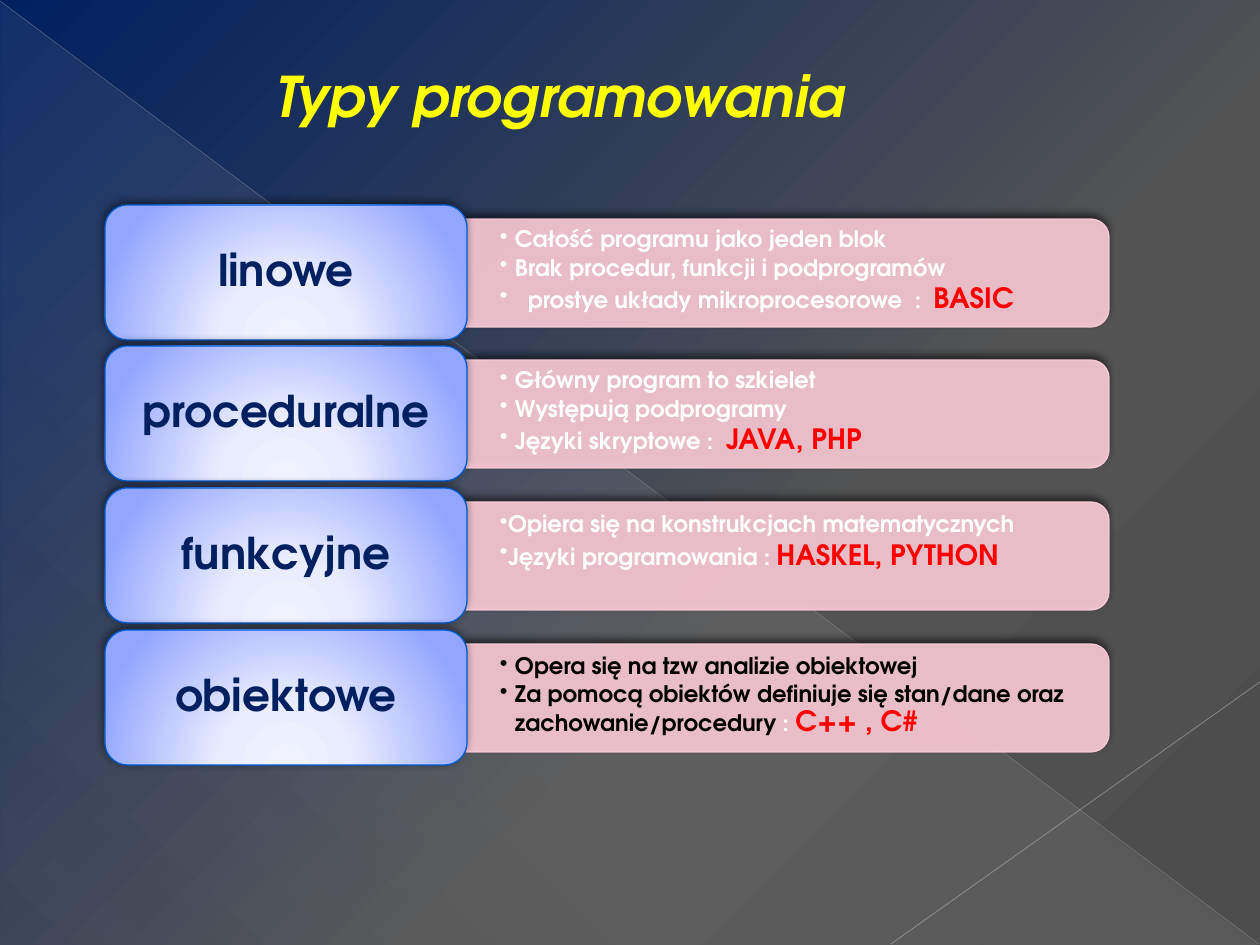
"""Build a slide that lists four types of programming with their traits."""
import pptx
import pptx.dml.color
import pptx.enum.shapes
import pptx.enum.text
import pptx.oxml
import pptx.oxml.ns
import pptx.util
from lxml import etree

PX = 7257
FONT = "TeX Gyre Adventor"
WHITE, BLACK, RED, NAVY = "FFFFFF", "000000", "FF0000", "002060"
qn = pptx.oxml.ns.qn
Pt = pptx.util.Pt
SHAPES = pptx.enum.shapes.MSO_SHAPE
MIDDLE = pptx.enum.text.MSO_ANCHOR.MIDDLE


def paint(stops, direction=None):
    """Return a solid fill for one (position, colour, opacity) stop, else a gradient."""
    colors = [
        f'<a:srgbClr val="{color}"><a:alpha val="{opacity * 1000}"/></a:srgbClr>'
        for _, color, opacity in stops
    ]
    namespace = pptx.oxml.ns.nsdecls("a")
    if direction is None:
        return pptx.oxml.parse_xml(f"<a:solidFill {namespace}>{colors[0]}</a:solidFill>")
    listing = "".join(
        f'<a:gs pos="{stop[0] * 1000}">{color}</a:gs>' for stop, color in zip(stops, colors)
    )
    return pptx.oxml.parse_xml(
        f"<a:gradFill {namespace}><a:gsLst>{listing}</a:gsLst>{direction}</a:gradFill>"
    )


def add_run(paragraph, text, size, color):
    """Add a bold run and return its font."""
    run = paragraph.add_run()
    run.text = text
    run.font.color.rgb = pptx.dml.color.RGBColor.from_string(color)
    run.font.name = FONT
    run.font.size = Pt(size)
    run.font.bold = True
    return run.font


presentation = pptx.Presentation()
presentation.slide_width = 1260 * PX
presentation.slide_height = 945 * PX
slide = presentation.slides.add_slide(presentation.slide_layouts[6])

slide.background.fill.solid()
plain_fill = slide.element.find(".//" + qn("p:bgPr")).find(qn("a:solidFill"))
plain_fill.getparent().replace(plain_fill, paint(
    [(0, NAVY, 100), (62, "535353", 100), (100, "4D4D4D", 100)],
    '<a:lin ang="2700000" scaled="0"/>',
))

triangle = slide.shapes.add_shape(SHAPES.RIGHT_TRIANGLE, 1 * PX, 2 * PX, 1258 * PX, 943 * PX)
triangle.element.spPr.append(paint(
    [(0, "D2D2D2", 10), (70, "D2D2D2", 8), (100, "D2D2D2", 1)],
    '<a:lin ang="7980000" scaled="0"/>',
))
triangle.line.fill.background()
triangle.shadow.inherit = False

for ends, color, width, opacity in [
    ((0, 1, 1259, 944), "BFBFBF", 0.39, 35),
    ((1260, 682, 891, 944), "C6C6C6", 0.47, 45),
]:
    connector = slide.shapes.add_connector(
        pptx.enum.shapes.MSO_CONNECTOR.STRAIGHT, *[end * PX for end in ends]
    )
    connector.line.width = Pt(width)
    properties = connector.element.spPr
    properties.find(qn("a:ln")).append(paint([(0, color, opacity)]))
    etree.SubElement(properties, qn("a:effectLst"))

types = [
    ("linowe", WHITE, 0, [
        (15, 15, [("Całość programu jako jeden blok", 13, WHITE)]),
        (15, 15, [("Brak procedur, funkcji i podprogramów", 13, WHITE)]),
        (28, 28, [("prostye układy mikroprocesorowe  :  ", 13, WHITE), ("BASIC", 16, RED)]),
    ]),
    ("proceduralne", WHITE, 0, [
        (15, 15, [("Główny program to szkielet", 13, WHITE)]),
        (15, 15, [("Występują podprogramy", 13, WHITE)]),
        (15, 15, [("Języki skryptowe :  ", 13, WHITE), ("JAVA, PHP", 16, RED)]),
    ]),
    ("funkcyjne", WHITE, 28, [
        (0, 0, [("Opiera się na konstrukcjach matematycznych", 13, WHITE)]),
        (0, 0, [("Języki programowania : ", 13, WHITE), ("HASKEL, PYTHON", 16, RED)]),
    ]),
    ("obiektowe", BLACK, 0, [
        (15, 15, [("Opera się na tzw analizie obiektowej", 13, BLACK)]),
        (15, 15, [
            ("Za pomocą obiektów definiuje się stan/dane oraz zachowanie/procedury ", 13, BLACK),
            (": ", 13, WHITE),
            ("C++ , C#", 16, RED),
        ]),
    ]),
]
bar_fill = [(0, "FFCEDA", 90)]
tile_fill = [(0, "F0F2FF", 100), (34, "EAEDFF", 100), (100, "92A5FF", 100)]
tile_glow = (
    '<a:path path="circle"><a:fillToRect l="50000" t="155000" r="50000" b="-55000"/></a:path>'
)

for row, (name, bullet_color, bottom_margin, details) in enumerate(types):
    top = 205 + 425 * row // 3
    for preset, box, rotation, stops, direction, edge, shadow in [
        (SHAPES.ROUND_2_SAME_RECTANGLE, (733, top - 254, 108, 644), 90,
         bar_fill, None, bar_fill, (60, 4, 3)),
        (SHAPES.ROUNDED_RECTANGLE, (105, top, 362, 135), 0,
         tile_fill, tile_glow, [(0, "005BD3", 100)], (50, 5, 2)),
    ]:
        shape = slide.shapes.add_shape(preset, *[length * PX for length in box])
        shape.rotation = rotation
        properties = shape.element.spPr
        properties.append(paint(stops, direction))
        shape.line.width = Pt(0.75)
        properties.find(qn("a:ln")).append(paint(edge))
        shape.shadow.inherit = False
        opacity, blur, distance = shadow
        outer = etree.SubElement(
            properties.find(qn("a:effectLst")), qn("a:outerShdw"), blurRad=str(Pt(blur)),
            dist=str(Pt(distance)), dir="14700000", rotWithShape="0",
        )
        outer.append(paint([(0, BLACK, opacity)])[0])

    shape.text_frame.vertical_anchor = MIDDLE
    paragraph = shape.text_frame.paragraphs[0]
    paragraph.alignment = pptx.enum.text.PP_ALIGN.CENTER
    paragraph.line_spacing = 0.9
    add_run(paragraph, name, 25, NAVY)

    frame = slide.shapes.add_textbox(466 * PX, (top + 18) * PX, 639 * PX, 97 * PX).text_frame
    frame.word_wrap = True
    frame.vertical_anchor = MIDDLE
    frame.margin_left = frame.margin_right = 34 * PX
    frame.margin_top = 0
    frame.margin_bottom = bottom_margin * PX
    for index, (margin, hanging, runs) in enumerate(details):
        paragraph = frame.add_paragraph() if index else frame.paragraphs[0]
        properties = paragraph._p.get_or_add_pPr()
        properties.set("marL", str(margin * PX))
        properties.set("indent", str(-hanging * PX))
        etree.SubElement(properties, qn("a:buClr")).append(paint([(0, bullet_color, 100)])[0])
        etree.SubElement(properties, qn("a:buChar"), char="•")
        if margin:
            paragraph.line_spacing = 0.9
            paragraph.space_after = Pt(2)
        for text, size, color in runs:
            add_run(paragraph, text, size, color)

title = slide.shapes.add_textbox(263 * PX, 55 * PX, 684 * PX, 80 * PX)
title.text_frame.word_wrap = True
title.text_frame.auto_size = pptx.enum.text.MSO_AUTO_SIZE.SHAPE_TO_FIT_TEXT
add_run(title.text_frame.paragraphs[0], "Typy programowania", 32, "FFFF00").italic = True

presentation.save("out.pptx")
